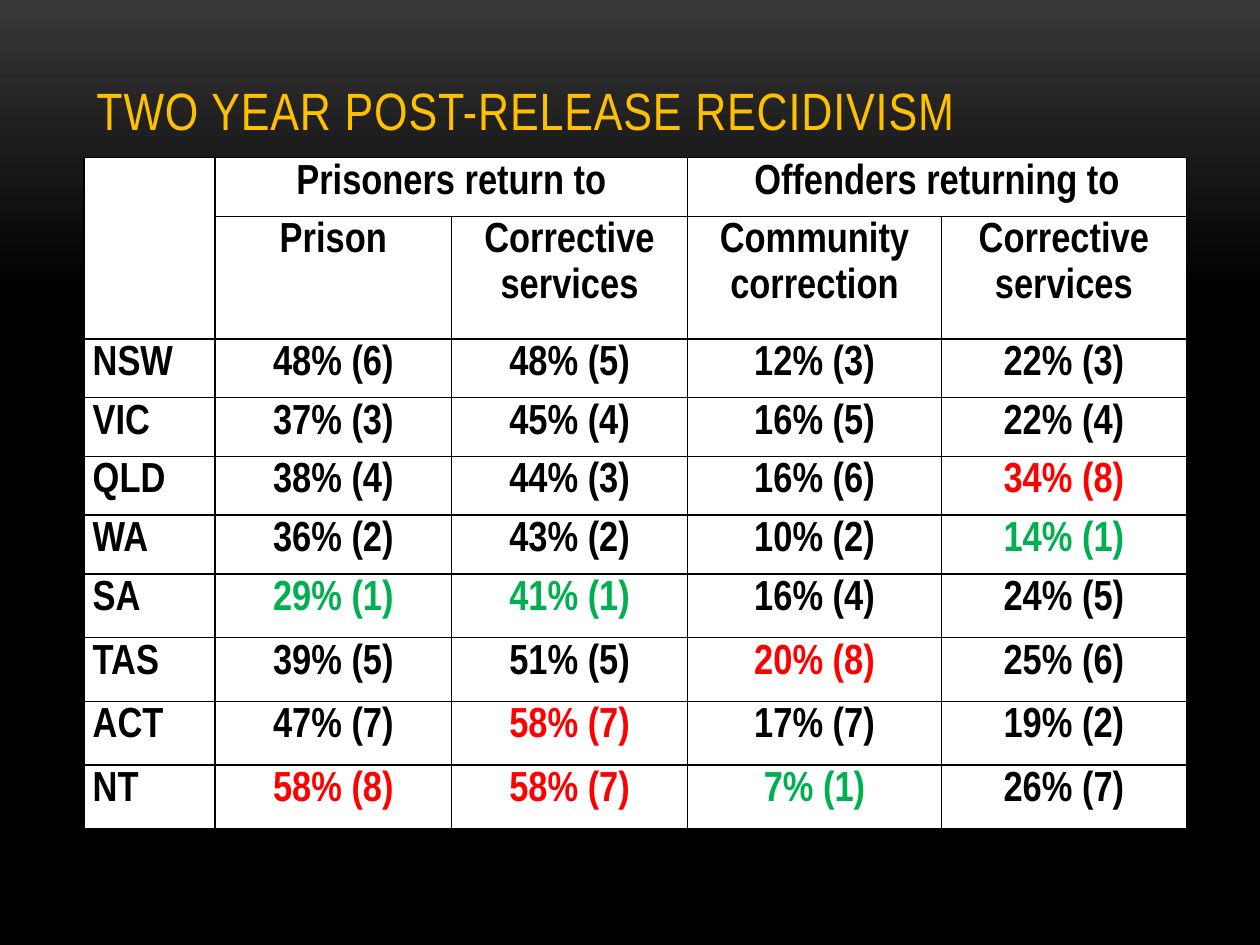
from lxml.etree import SubElement
from pptx import Presentation
from pptx.dml.color import RGBColor
from pptx.enum.text import MSO_ANCHOR as Anchor, PP_ALIGN as Align
from pptx.oxml.ns import qn
from pptx.util import Pt

BLACK = RGBColor(0x00, 0x00, 0x00)
CHARCOAL = RGBColor(0x38, 0x38, 0x38)
WHITE = RGBColor(0xFF, 0xFF, 0xFF)
GOLD = RGBColor(0xFF, 0xC0, 0x00)
RED = RGBColor(0xFF, 0x00, 0x00)
GREEN = RGBColor(0x00, 0xB0, 0x50)

STATES = ["NSW", "VIC", "QLD", "WA", "SA", "TAS", "ACT", "NT"]
MEASURES = ["Prison", "Corrective services", "Community correction", "Corrective services"]
RATES = [
    [48, 48, 12, 22],
    [37, 45, 16, 22],
    [38, 44, 16, 34],
    [36, 43, 10, 14],
    [29, 41, 16, 24],
    [39, 51, 20, 25],
    [47, 58, 17, 19],
    [58, 58, 7, 26],
]
RANKS = [
    [6, 5, 3, 3],
    [3, 4, 5, 4],
    [4, 3, 6, 8],
    [2, 2, 2, 1],
    [1, 1, 4, 5],
    [5, 5, 8, 6],
    [7, 7, 7, 2],
    [8, 7, 1, 7],
]
COLUMN_WIDTHS = [75, 135, 135, 145, 140]
ROW_HEIGHTS = [33.6, 70] + [33.6] * 4 + [36.4] * 4


def write(text_frame, text, size=24, color=BLACK, bold=True, align=Align.CENTER, spacing=1.15):
    paragraph = text_frame.paragraphs[0]
    paragraph.alignment = align
    paragraph.line_spacing = spacing
    run = paragraph.add_run()
    run.text = text
    run.font.name = "Arial Narrow"
    run.font.size = Pt(size)
    run.font.bold = bold
    run.font.color.rgb = color
    return run


def add_borders(cell):
    properties = cell._tc.get_or_add_tcPr()
    for side in ("lnL", "lnR", "lnT", "lnB"):
        line = SubElement(properties, qn(f"a:{side}"), w=str(Pt(1)))
        fill = SubElement(line, qn("a:solidFill"))
        SubElement(fill, qn("a:srgbClr"), val=str(BLACK))


presentation = Presentation()
presentation.slide_width = Pt(720)
presentation.slide_height = Pt(540)
slide = presentation.slides.add_slide(presentation.slide_layouts[6])

background = slide.background.fill
background.gradient()
background.gradient_angle = 270
for stop, position, color in zip(background.gradient_stops, (0, 0.31), (CHARCOAL, BLACK)):
    stop.position = position
    stop.color.rgb = color

title = slide.shapes.add_textbox(Pt(48), Pt(21.6), Pt(624), Pt(62.6)).text_frame
title.word_wrap = True
title.vertical_anchor = Anchor.BOTTOM
title_run = write(title, "TWO YEAR POST-RELEASE RECIDIVISM", size=30, color=GOLD,
                  bold=False, align=Align.LEFT, spacing=1)
title_run.font._element.set("spc", "50")

table = slide.shapes.add_table(
    len(ROW_HEIGHTS), len(COLUMN_WIDTHS),
    Pt(48), Pt(90), Pt(sum(COLUMN_WIDTHS)), Pt(sum(ROW_HEIGHTS)),
).table
for column, width in zip(table.columns, COLUMN_WIDTHS):
    column.width = Pt(width)
for row, height in zip(table.rows, ROW_HEIGHTS):
    row.height = Pt(height)

for cell in table.iter_cells():
    add_borders(cell)
    cell.fill.solid()
    cell.fill.fore_color.rgb = WHITE
    cell.margin_left = cell.margin_right = Pt(5)
    cell.margin_top = cell.margin_bottom = 0

table.cell(0, 0).merge(table.cell(1, 0))
for column, heading in ((1, "Prisoners return to"), (3, "Offenders returning to")):
    table.cell(0, column).merge(table.cell(0, column + 1))
    write(table.cell(0, column).text_frame, heading)
for column, measure in enumerate(MEASURES, start=1):
    write(table.cell(1, column).text_frame, measure)

# The lowest rate of each column is green and the highest is red.
column_colors = [{min(rates): GREEN, max(rates): RED} for rates in zip(*RATES)]
for row, (state, rates, ranks) in enumerate(zip(STATES, RATES, RANKS), start=2):
    write(table.cell(row, 0).text_frame, state, align=Align.LEFT)
    for column, (rate, rank, colors) in enumerate(zip(rates, ranks, column_colors), start=1):
        write(table.cell(row, column).text_frame, f"{rate}% ({rank})",
              color=colors.get(rate, BLACK))

presentation.save("out.pptx")
